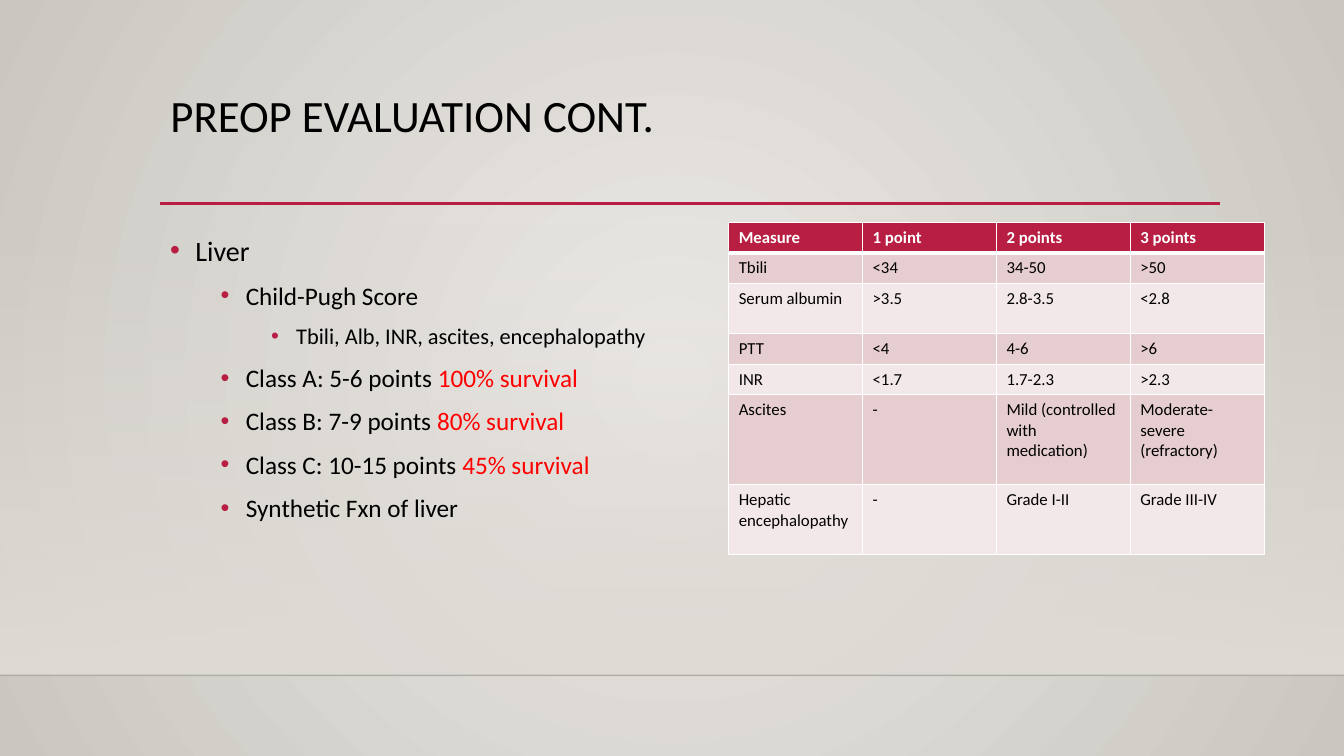
"""Build the liver slide of a preoperative evaluation talk."""
import dataclasses

import lxml.etree
import pptx
import pptx.dml.color
import pptx.enum.shapes
import pptx.enum.text
import pptx.oxml.ns
import pptx.util


@dataclasses.dataclass(frozen=True)
class Theme:
    """Colours, font and type sizes."""
    font: str = "Calibri"
    ink: str = "000000"
    accent: str = "B71E42"
    alert: str = "FF0000"
    white: str = "FFFFFF"
    wall: tuple = ("ECEAE7", "CAC7C1")
    floor: str = "DFDBD5"
    edge: str = "000001"
    bands: tuple = ("F3E8E9", "E6CDCF")
    title_size: int = 32
    level_sizes: tuple = (20, 18, 16)
    cell_size: int = 12


def rgb(code):
    """Turn a hex code into a colour."""
    return pptx.dml.color.RGBColor.from_string(code)


def child(parent, tag, **attributes):
    """Append a DrawingML element."""
    return lxml.etree.SubElement(parent, pptx.oxml.ns.qn(tag), attributes)


def fade(colour, percent):
    """Set the opacity of a colour element."""
    child(colour, "a:alpha", val=str(percent * 1000))


class SlideBuilder:
    """Draw on one slide, with places given in percent of its size."""

    def __init__(self, deck, theme):
        """Add a title-only slide."""
        self.deck, self.theme = deck, theme
        self.slide = deck.slides.add_slide(deck.slide_layouts[5])

    def x(self, share):
        """Convert a share of the width."""
        return round(self.deck.slide_width * share / 100)

    def y(self, share):
        """Convert a share of the height."""
        return round(self.deck.slide_height * share / 100)

    def box(self, left, top, width, height):
        """Convert a whole frame."""
        return self.x(left), self.y(top), self.x(width), self.y(height)

    def gradient(self, fill, host, colours):
        """Apply a two-stop gradient and return its element without a direction."""
        fill.gradient()
        for stop, colour in zip(fill.gradient_stops, colours):
            stop.color.rgb = rgb(colour)
        element = next(host.iter(pptx.oxml.ns.qn("a:gradFill")))
        element.remove(element.find(pptx.oxml.ns.qn("a:lin")))
        return element

    def background(self):
        """Fill the background from the centre outwards."""
        element = self.gradient(self.slide.background.fill, self.slide.element, self.theme.wall)
        centre = child(element, "a:path", path="circle")
        child(centre, "a:fillToRect", l="50000", t="50000", r="50000", b="50000")

    def band(self, *place):
        """Draw a band that fades in downwards."""
        band = self.slide.shapes.add_shape(
            pptx.enum.shapes.MSO_SHAPE.RECTANGLE, *self.box(*place))
        band.shadow.inherit = False
        band.line.fill.background()
        element = self.gradient(band.fill, band.element, (self.theme.floor,) * 2)
        fade(next(element.iter(pptx.oxml.ns.qn("a:srgbClr"))), 0)
        child(element, "a:lin", ang="5400000", scaled="0")

    def rule(self, left, right, height, colour, weight, opacity=100):
        """Draw a horizontal line."""
        rule = self.slide.shapes.add_connector(
            pptx.enum.shapes.MSO_CONNECTOR.STRAIGHT,
            self.x(left), self.y(height), self.x(right), self.y(height))
        rule.line.color.rgb = rgb(colour)
        rule.line.width = pptx.util.Pt(weight)
        if opacity < 100:
            fade(next(rule.element.spPr.iter(pptx.oxml.ns.qn("a:srgbClr"))), opacity)
        child(rule.element.spPr, "a:effectLst")

    def run(self, paragraph, text, size, colour, bold=False):
        """Add one formatted run."""
        run = paragraph.add_run()
        run.text = text
        run.font.name, run.font.size, run.font.bold = self.theme.font, pptx.util.Pt(size), bold
        run.font.color.rgb = rgb(colour)

    def title(self, text, *place):
        """Place and write the title."""
        title = self.slide.shapes.title
        title.left, title.top, title.width, title.height = self.box(*place)
        title.text_frame.vertical_anchor = pptx.enum.text.MSO_ANCHOR.TOP
        heading = title.text_frame.paragraphs[0]
        heading.alignment = pptx.enum.text.PP_ALIGN.LEFT
        heading.line_spacing = 0.9
        self.run(heading, text, self.theme.title_size, self.theme.ink)

    def bullets(self, points, *place):
        """Write bulleted points given as level, text and highlighted text."""
        frame = self.slide.shapes.add_textbox(*self.box(*place)).text_frame
        frame.word_wrap = True
        for index, (level, text, highlight) in enumerate(points):
            point = frame.add_paragraph() if index else frame.paragraphs[0]
            properties = point._p.get_or_add_pPr()
            properties.set("marL", str(pptx.util.Inches(0.25 + 0.5 * level)))
            properties.set("indent", str(pptx.util.Inches(-0.25)))
            child(child(properties, "a:buClr"), "a:srgbClr", val=self.theme.accent)
            child(properties, "a:buFont", typeface="Arial")
            child(properties, "a:buChar", char="•")
            point.level = level
            point.line_spacing = 1.2
            if index:
                point.space_before = pptx.util.Pt(5)
            size = self.theme.level_sizes[level]
            self.run(point, text, size, self.theme.ink)
            if highlight:
                self.run(point, highlight, size, self.theme.alert)

    def borders(self, cell, header):
        """Draw white cell borders, heavy below the header."""
        weights = {"a:lnL": 1, "a:lnR": 1, "a:lnT": 1, "a:lnB": 3 if header else 1}
        if not header:
            del weights["a:lnT"]
        properties = cell._tc.get_or_add_tcPr()
        for index, (side, weight) in enumerate(weights.items()):
            border = child(properties, side, w=str(pptx.util.Pt(weight)))
            child(child(border, "a:solidFill"), "a:srgbClr", val=self.theme.white)
            properties.insert(index, border)

    def table(self, rows, heights, left, top, width):
        """Draw a banded table with equal columns."""
        table = self.slide.shapes.add_table(
            len(rows), len(rows[0]), *self.box(left, top, width, sum(heights))).table
        for row_index, (row, height) in enumerate(zip(rows, heights)):
            table.rows[row_index].height = self.y(height)
            header = row_index == 0
            for column_index, text in enumerate(row):
                cell = table.cell(row_index, column_index)
                cell.fill.solid()
                cell.fill.fore_color.rgb = rgb(
                    self.theme.accent if header else self.theme.bands[row_index % 2])
                self.borders(cell, header)
                self.run(cell.text_frame.paragraphs[0], text, self.theme.cell_size,
                         self.theme.white if header else self.theme.ink, header)


POINTS = [
    (0, "Liver", ""),
    (1, "Child-Pugh Score", ""),
    (2, "Tbili, Alb, INR, ascites, encephalopathy", ""),
    (1, "Class A: 5-6 points ", "100% survival"),
    (1, "Class B: 7-9 points ", "80% survival"),
    (1, "Class C: 10-15 points ", "45% survival"),
    (1, "Synthetic Fxn of liver", ""),
]
SCORES = [
    ("Measure", "1 point", "2 points", "3 points"),
    ("Tbili", "<34", "34-50", ">50"),
    ("Serum albumin", ">3.5", "2.8-3.5", "<2.8"),
    ("PTT", "<4", "4-6", ">6"),
    ("INR", "<1.7", "1.7-2.3", ">2.3"),
    ("Ascites", "-", "Mild (controlled with medication)", "Moderate-severe (refractory)"),
    ("Hepatic encephalopathy", "-", "Grade I-II", "Grade III-IV"),
]
SCORE_HEIGHTS = (4.04, 4.04, 6.67, 4.04, 4.04, 11.9, 9.25)


def main():
    """Build and save the slide."""
    deck = pptx.Presentation()
    deck.slide_width, deck.slide_height = pptx.util.Inches(13.33), pptx.util.Inches(7.5)
    theme = Theme()
    page = SlideBuilder(deck, theme)
    page.background()
    page.band(0, 29.47, 100, 59.87)
    page.rule(0, 100, 89.33, theme.edge, 1, opacity=20)
    page.rule(11.93, 90.77, 26.93, theme.accent, 2.5)
    page.title("PREOP EVALUATION CONT.", 11.93, 11.73, 78.77, 15.33)
    page.bullets(POINTS, 11.93, 29.33, 78.77, 50.27)
    page.table(SCORES, SCORE_HEIGHTS, 54.22, 29.4, 39.84)
    deck.save("out.pptx")


if __name__ == "__main__":
    main()
